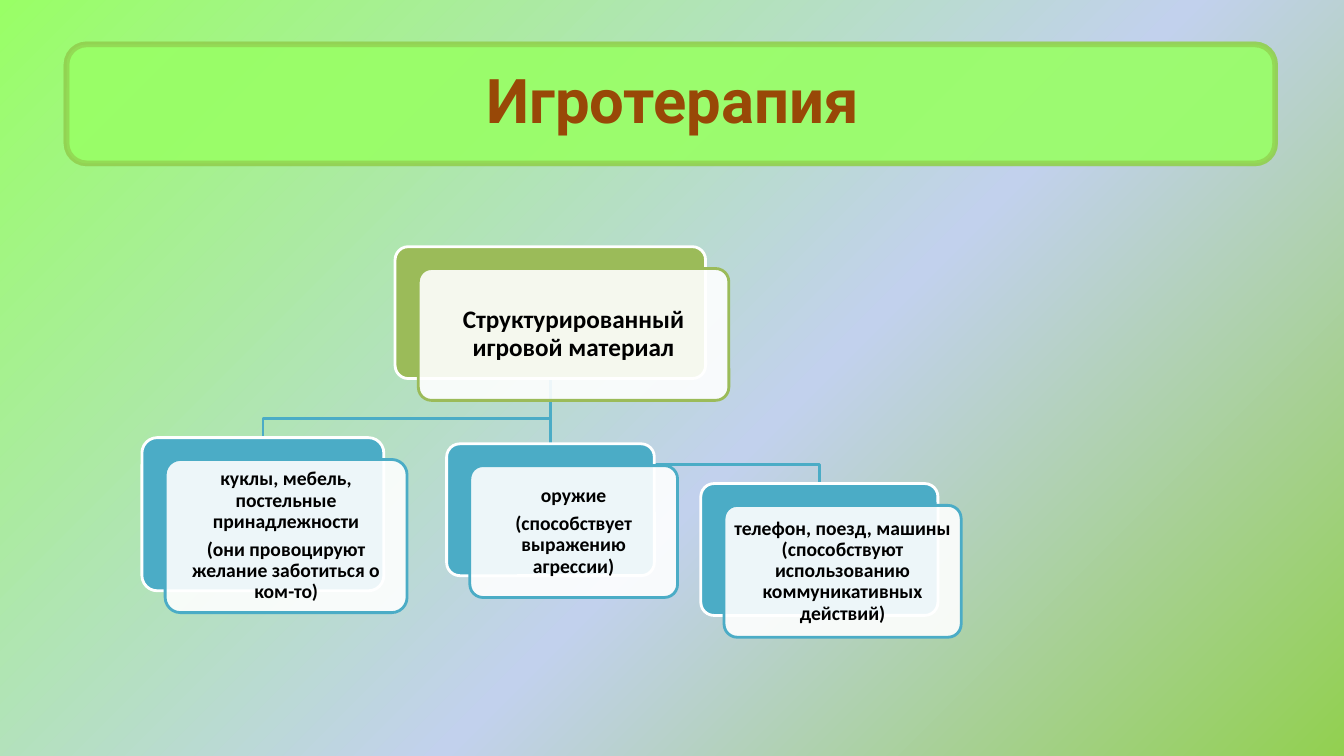
from pptx import Presentation
from pptx.dml.color import RGBColor
from pptx.enum.shapes import MSO_SHAPE as Preset
from pptx.enum.text import MSO_ANCHOR as Anchor, MSO_AUTO_SIZE as AutoSize, PP_ALIGN as Align
from pptx.oxml import parse_xml
from pptx.oxml.ns import nsdecls, qn
from pptx.util import Pt

LIME, GRASS, SKY = "99FF66", "92D050", "C2D1ED"
OLIVE, TEAL, WHITE = "9BBB59", "4BACC6", "FFFFFF"
CARD_SHIFT = (16.6, 15.6)  # front card relative to back card
BEND = 13.7  # height of a branch's bend above its child

ROOT = ((282.2, 176.2, 221.8, 94.2), ["Структурированный игровой материал"])
CHILDREN = [
    ((101.4, 312.6, 172.8, 109.4),
     ["куклы, мебель, постельные принадлежности",
      "(они провоцируют желание заботиться о ком-то)"]),
    ((319, 317, 148.4, 94.2), ["оружие", "(способствует выражению агрессии)"]),
    ((500.6, 345.4, 169.4, 94.2),
     ["телефон, поезд, машины (способствуют использованию коммуникативных действий)"]),
]


def color(hex_value):
    return RGBColor.from_string(hex_value)


def set_alpha(parent, percent):
    solid = parent.find(qn("a:solidFill"))
    solid[0].append(parse_xml(f'<a:alpha {nsdecls("a")} val="{percent * 1000}"/>'))


def write(frame, paragraphs, *, size, font, ink="000000", inset=4, leading=1.0, after=0):
    frame.word_wrap = True
    frame.auto_size = AutoSize.NONE
    frame.vertical_anchor = Anchor.MIDDLE
    frame.margin_left = frame.margin_right = Pt(inset)
    frame.margin_top = frame.margin_bottom = Pt(inset)
    for index, wording in enumerate(paragraphs):
        paragraph = frame.add_paragraph() if index else frame.paragraphs[0]
        paragraph.alignment = Align.CENTER
        paragraph.line_spacing = leading
        paragraph.space_after = Pt(after)
        run = paragraph.add_run()
        run.text = wording
        run.font.size = Pt(size)
        run.font.name = font
        run.font.bold = True
        run.font.color.rgb = color(ink)


def add_rounded(slide, box, fill, line, *, weight=2, radius=0.1, fill_alpha=100, line_alpha=100):
    rounded = slide.shapes.add_shape(Preset.ROUNDED_RECTANGLE, *map(Pt, box))
    rounded.shadow.inherit = False
    rounded.adjustments[0] = radius
    rounded.fill.solid()
    rounded.fill.fore_color.rgb = color(fill)
    rounded.line.color.rgb = color(line)
    rounded.line.width = Pt(weight)
    properties = rounded._element.spPr
    if fill_alpha < 100:
        set_alpha(properties, fill_alpha)
    if line_alpha < 100:
        set_alpha(properties.find(qn("a:ln")), line_alpha)
    return rounded


def add_background(slide):
    slide.background.fill.gradient()
    gradient = slide.background._cSld.bg.bgPr.find(qn("a:gradFill"))
    stops = "".join(
        f'<a:gs pos="{position * 1000}"><a:srgbClr val="{tint}"/></a:gs>'
        for position, tint in [(0, LIME), (57, SKY), (100, GRASS)])
    gradient.getparent().replace(gradient, parse_xml(
        f'<a:gradFill {nsdecls("a")} rotWithShape="1"><a:gsLst>{stops}</a:gsLst>'
        '<a:lin ang="2700000" scaled="0"/></a:gradFill>'))


def add_heading(slide, box, wording):
    # Two translucent layers form the panel
    for opacity in (66, 75):
        add_rounded(slide, box, LIME, GRASS, weight=4, radius=0.17,
                    fill_alpha=opacity, line_alpha=71)
    left, top, width, height = box
    title = slide.shapes.title
    title.left, title.top = Pt(left + 1.4), Pt(top - 5.8)
    title.width, title.height = Pt(width), Pt(height + 5)
    write(title.text_frame, [wording], size=44, font="Roboto", ink="984807")
    slide.shapes._spTree.append(title._element)  # bring above the panel


def add_branch(slide, parent_box, child_box):
    left, top, width, height = parent_box
    start_x, start_y = left + width / 2, top + height
    end_x, end_y = child_box[0] + child_box[2] / 2, child_box[1]
    bend_y = end_y - BEND
    outline = slide.shapes.build_freeform(Pt(start_x), Pt(start_y))
    corners = [(start_x, bend_y), (end_x, bend_y), (end_x, end_y)]
    outline.add_line_segments([(Pt(x), Pt(y)) for x, y in corners], close=False)
    branch = outline.convert_to_shape()
    branch.shadow.inherit = False
    branch.fill.background()
    branch.line.color.rgb = color(TEAL)
    branch.line.width = Pt(2)


def add_card(slide, box, paragraphs, accent, size):
    left, top, width, height = box
    add_rounded(slide, box, accent, WHITE)
    front_box = (left + CARD_SHIFT[0], top + CARD_SHIFT[1], width, height)
    front = add_rounded(slide, front_box, WHITE, accent, fill_alpha=90)
    write(front.text_frame, paragraphs, size=size, font="Calibri",
          leading=0.9, after=round(size * 0.35, 1))


def add_hierarchy(slide):
    root_box, root_text = ROOT
    # Branches lie behind the cards
    for child_box, _ in reversed(CHILDREN):
        add_branch(slide, root_box, child_box)
    add_card(slide, root_box, root_text, OLIVE, 18)
    for child_box, child_text in CHILDREN:
        add_card(slide, child_box, child_text, TEAL, 14)


def main():
    deck = Presentation()
    deck.slide_width, deck.slide_height = Pt(960), Pt(540)
    slide = deck.slides.add_slide(deck.slide_layouts[5])
    add_background(slide)
    add_heading(slide, (47.5, 31.7, 863.3, 85), "Игротерапия")
    add_hierarchy(slide)
    deck.save("out.pptx")


if __name__ == "__main__":
    main()
